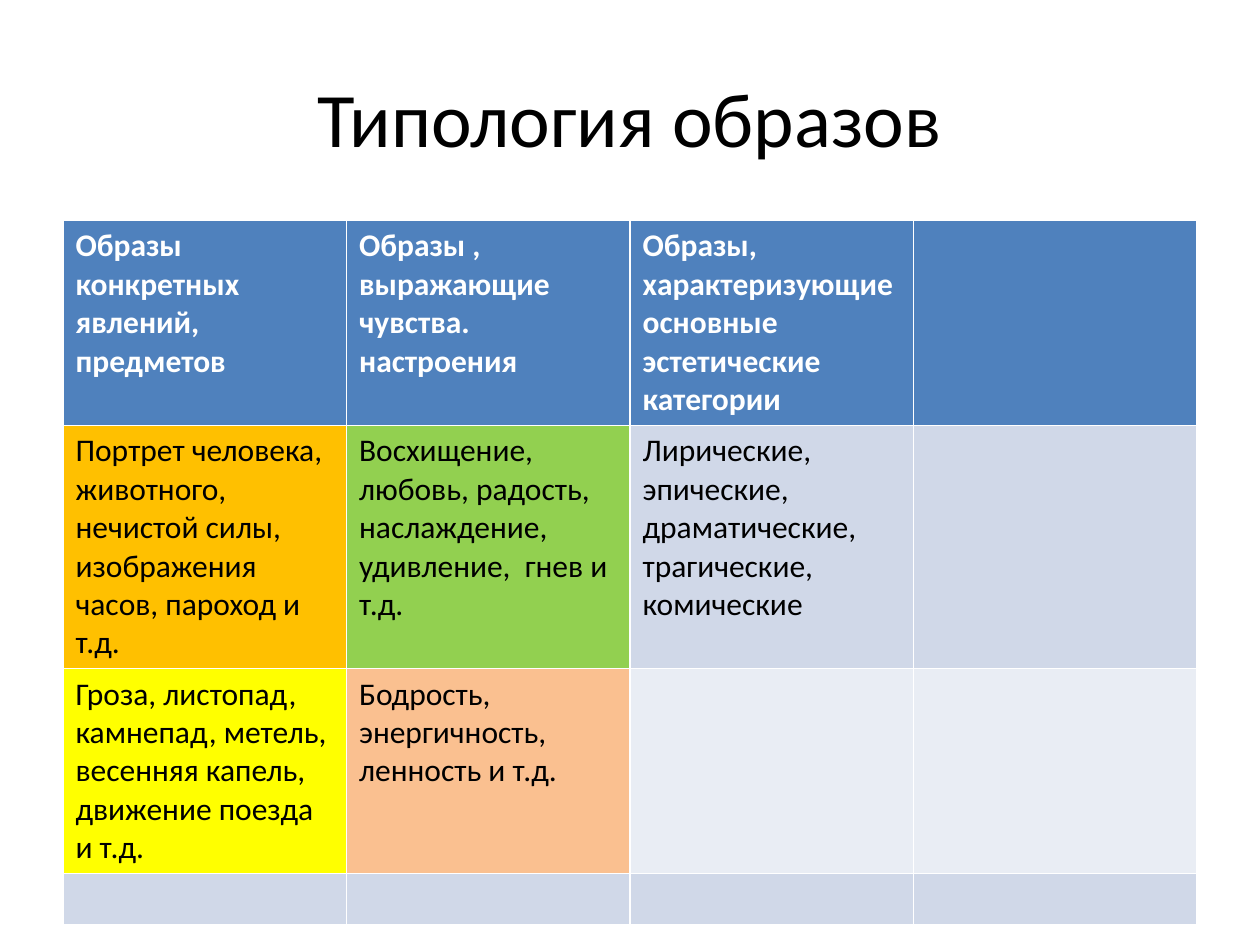
from dataclasses import dataclass

from pptx import Presentation
from pptx.dml.color import RGBColor as RGB
from pptx.enum.text import MSO_ANCHOR as Anchor, PP_ALIGN as Align
from pptx.util import Inches, Pt


@dataclass(frozen=True)
class Theme:
    font: str = "Calibri"
    title_size: int = 44
    table_size: int = 18
    text: str = "000000"
    header_text: str = "FFFFFF"
    header: str = "4F81BD"
    band_dark: str = "D0D8E8"
    band_light: str = "E9EDF4"
    orange: str = "FFC000"
    green: str = "92D050"
    yellow: str = "FFFF00"
    peach: str = "FAC090"


class SlideBuilder:
    def __init__(self, slide, theme):
        self.slide = slide
        self.theme = theme

    def format_text(self, frame, size, color, bold=False):
        for paragraph in frame.paragraphs:
            for run in paragraph.runs:
                run.font.name = self.theme.font
                run.font.size = Pt(size)
                run.font.bold = bold
                run.font.color.rgb = RGB.from_string(color)

    def title(self, text, left, top, width, height):
        heading = self.slide.shapes.title
        heading.left, heading.top = Inches(left), Inches(top)
        heading.width, heading.height = Inches(width), Inches(height)
        frame = heading.text_frame
        frame.text = text
        frame.vertical_anchor = Anchor.MIDDLE
        frame.paragraphs[0].alignment = Align.CENTER
        self.format_text(frame, self.theme.title_size, self.theme.text)

    def table(self, rows, fills, heights, left, top, width):
        """The default table style supplies the white cell borders."""
        theme = self.theme
        grid = self.slide.shapes.add_table(
            len(rows), len(rows[0]), Inches(left), Inches(top),
            Inches(width), Inches(sum(heights))).table
        for r, (texts, colors, height) in enumerate(zip(rows, fills, heights)):
            grid.rows[r].height = Inches(height)
            is_header = r == 0
            for c, (text, color) in enumerate(zip(texts, colors)):
                cell = grid.cell(r, c)
                cell.fill.solid()
                cell.fill.fore_color.rgb = RGB.from_string(color)
                if text:
                    cell.text_frame.text = text
                    self.format_text(
                        cell.text_frame, theme.table_size,
                        theme.header_text if is_header else theme.text,
                        bold=is_header)


IMAGE_TYPES = [
    ["Образы конкретных явлений, предметов",
     "Образы , выражающие чувства. настроения",
     "Образы, характеризующие основные эстетические категории",
     ""],
    ["Портрет человека,\n"
     "животного, нечистой силы, изображения часов, пароход и т.д.",
     "Восхищение, любовь, радость, наслаждение, удивление,  гнев и т.д.",
     "Лирические, эпические, драматические, трагические, комические",
     ""],
    ["Гроза, листопад, камнепад, метель,\n"
     "весенняя капель, движение поезда и т.д.",
     "Бодрость, энергичность, ленность и т.д.",
     "", ""],
    [""] * 4,
]


def main():
    prs = Presentation()
    prs.slide_width, prs.slide_height = Inches(10), Inches(7.5)
    theme = Theme()
    builder = SlideBuilder(
        prs.slides.add_slide(prs.slide_layouts.get_by_name("Title Only")), theme)

    # Title
    builder.title("Типология образов", 0.5, 0.3, 9, 1.25)

    # Table of image types
    fills = [
        [theme.header] * 4,
        [theme.orange, theme.green] + [theme.band_dark] * 2,
        [theme.yellow, theme.peach] + [theme.band_light] * 2,
        [theme.band_dark] * 4,
    ]
    builder.table(IMAGE_TYPES, fills, [1.6, 1.9, 1.6, 0.41], 0.5, 1.75, 9)

    prs.save("out.pptx")


if __name__ == "__main__":
    main()
